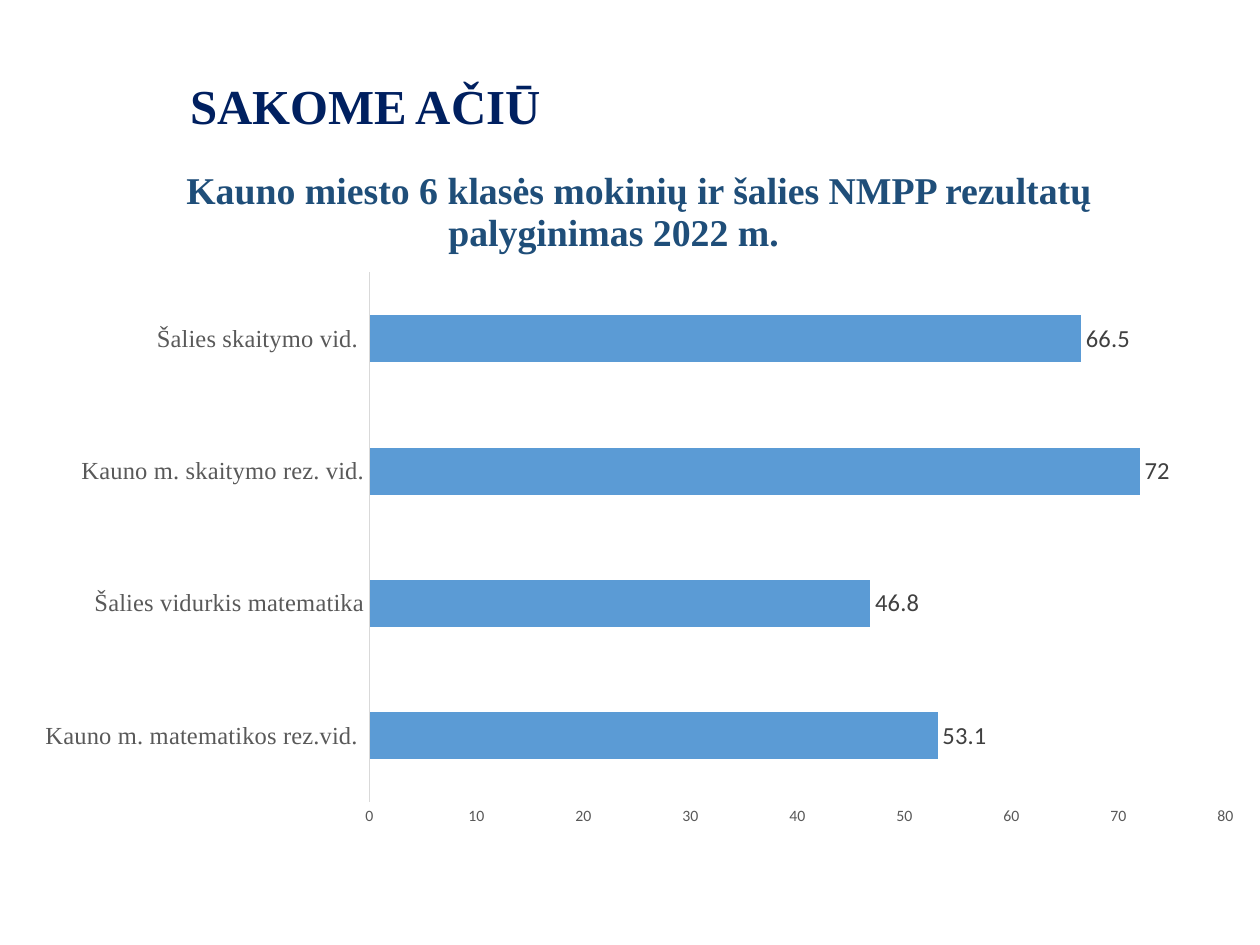
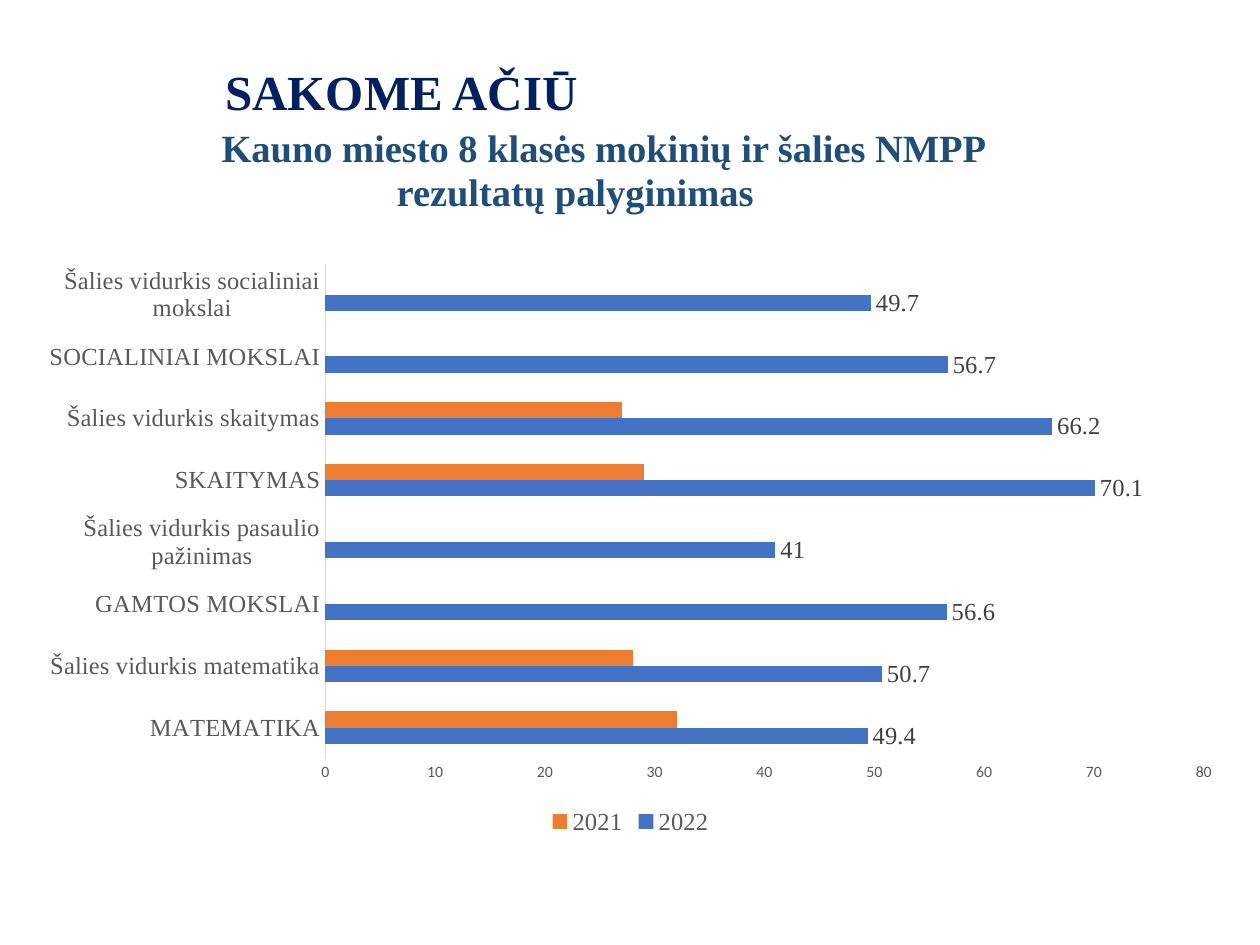
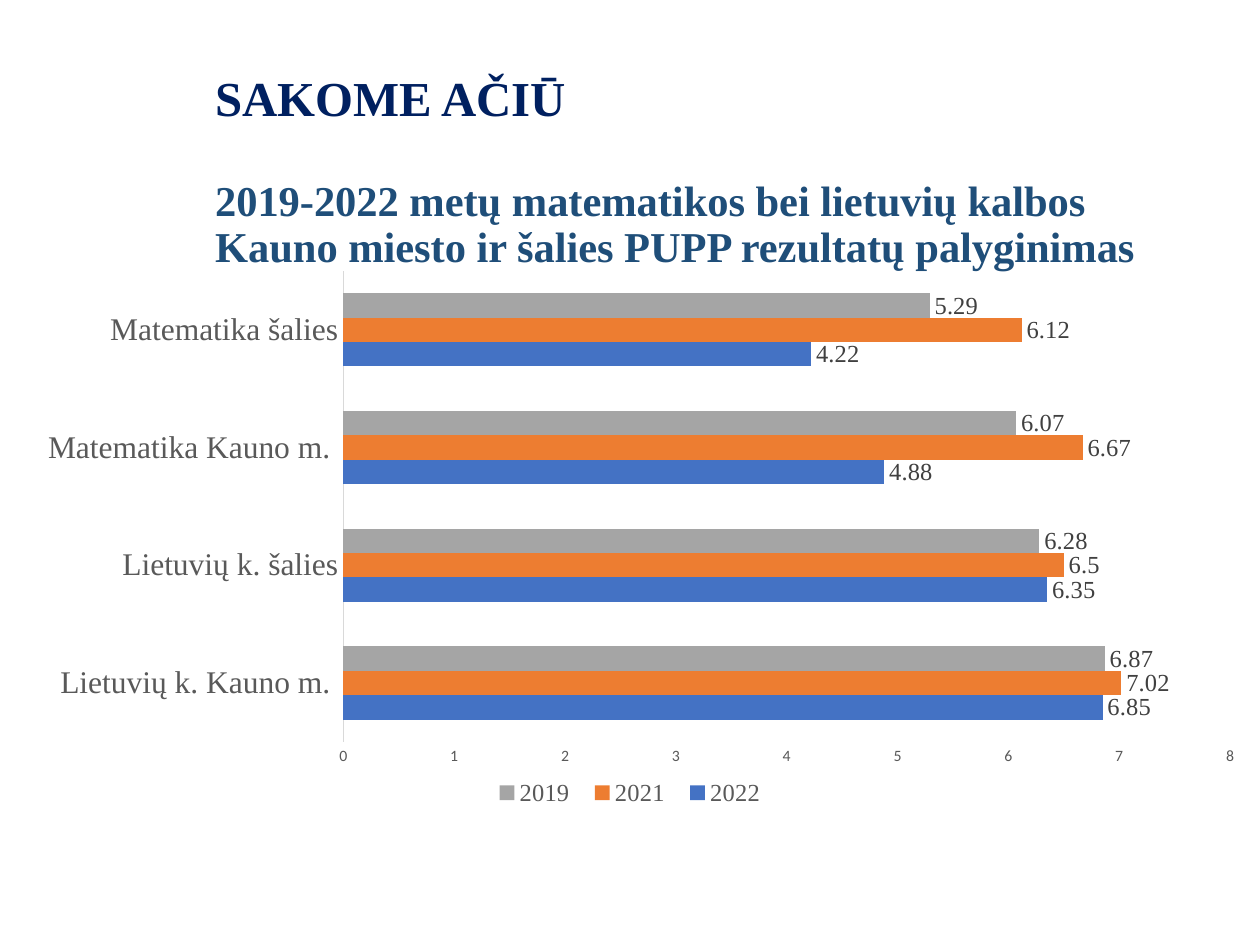
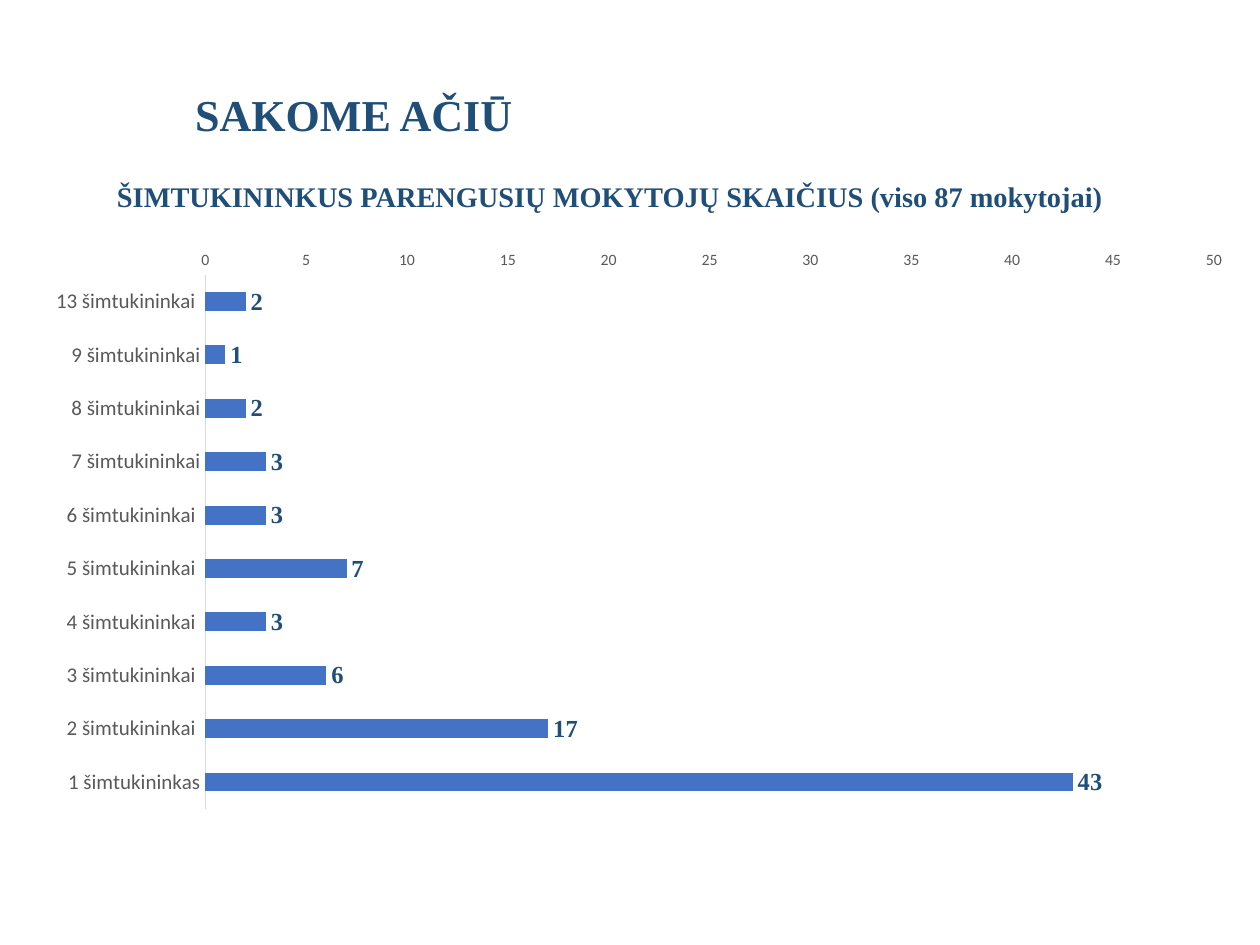
from lxml import etree
from pptx import Presentation
from pptx.chart.data import CategoryChartData
from pptx.dml.color import RGBColor
from pptx.enum.chart import XL_CHART_TYPE, XL_LABEL_POSITION, XL_LEGEND_POSITION, XL_TICK_MARK
from pptx.enum.text import MSO_ANCHOR
from pptx.oxml.ns import qn
from pptx.util import Inches, Pt

COLORS = {
    "navy": "002060", "heading": "1F4E79", "axis": "595959", "label": "404040",
    "line": "D9D9D9", "black": "000000", "sky": "5B9BD5", "blue": "4472C4",
    "orange": "ED7D31", "gray": "A5A5A5",
}
SERIF, SANS = "Times New Roman", "Calibri"
THANKS = "SAKOME AČIŪ"

# Title lines: text, size, colour, indent (in), space before (pt)
# Series: name, colour, values, label style (font, colour, bold) or None
SANS_LABEL = (SANS, "label", False)
SERIF_LABEL = (SERIF, "label", False)
BOLD_LABEL = (SERIF, "heading", True)
SLIDES = [
    {
        "title_box": (1.06, 0.36, 8.62, 1.63), "title_inset": 0.29,
        "title": [
            (THANKS, 27.9, "navy", 0.35, 0),
            ("Kauno miesto 6 klasės mokinių ir šalies NMPP rezultatų", 21.6, "heading", 0.32, 21.5),
            ("palyginimas 2022 m.", 21.6, "heading", 2.4, 0.5),
        ],
        "chart_box": (0.2, 2, 9.69, 4.67), "plot": (0.282, 0.035, 0.701, 0.9),
        "cat_font": (SERIF, 14), "axis_max": 80, "axis_step": 10,
        "cats": ["Kauno m. matematikos rez.vid. ", "Šalies vidurkis matematika",
                 "Kauno m. skaitymo rez. vid.", "Šalies skaitymo vid. "],
        "series": [("Series 1", "sky", [53.1, 46.8, 72, 66.5], SANS_LABEL)],
    },
    {
        "title_box": (0.69, 0.4, 8.62, 1.45), "title_inset": 0.14,
        "title": [
            (THANKS, 28, "navy", 1, 0),
            ("Kauno miesto 8 klasės mokinių ir šalies NMPP", 22, "heading", 0.97, 5),
            ("rezultatų palyginimas", 22, "heading", 2.36, 1.4),
        ],
        "chart_box": (0.2, 2, 9.61, 4.67),
        "cat_font": (SERIF, 14), "axis_max": 80, "axis_step": 10, "has_legend": True,
        "cats": ["MATEMATIKA", "Šalies vidurkis matematika", "GAMTOS MOKSLAI",
                 "Šalies vidurkis pasaulio pažinimas", "SKAITYMAS",
                 "Šalies vidurkis skaitymas", "SOCIALINIAI MOKSLAI",
                 "Šalies vidurkis socialiniai mokslai"],
        "series": [
            ("2022", "blue", [49.4, 50.7, 56.6, 41, 70.1, 66.2, 56.7, 49.7], SERIF_LABEL),
            ("2021", "orange", [32, 28, None, None, 29, 27, None, None], None),
        ],
    },
    {
        "title_box": (1.61, 0.52, 7.7, 1.7), "title_inset": 0.07,
        "title": [
            (THANKS, 27.9, "navy", 0, 0),
            ("2019-2022 metų matematikos bei lietuvių kalbos", 24.3, "heading", 0, 30.3),
            ("Kauno miesto ir šalies PUPP rezultatų palyginimas", 24.3, "heading", 0, 0),
        ],
        "chart_box": (0.12, 2, 9.76, 4.59), "plot": (0.267, 0.033, 0.721, 0.814),
        "cat_font": (SERIF, 18), "axis_max": 8, "axis_step": 1, "has_legend": True,
        "legend": (0.38, 0.9, 0.24, 0.07),
        "cats": ["Lietuvių k. Kauno m. ", "Lietuvių k. šalies",
                 "Matematika Kauno m. ", "Matematika šalies"],
        "series": [
            ("2022", "blue", [6.85, 6.35, 4.88, 4.22], SERIF_LABEL),
            ("2021", "orange", [7.02, 6.5, 6.67, 6.12], SERIF_LABEL),
            ("2019", "gray", [6.87, 6.28, 6.07, 5.29], SERIF_LABEL),
        ],
    },
    {
        "title_box": (0.83, 0.4, 8.62, 1.45), "title_inset": 0.34,
        "title": [
            (THANKS, 25.2, "heading", 0.62, 0),
            ("ŠIMTUKININKUS PARENGUSIŲ MOKYTOJŲ SKAIČIUS (viso 87 mokytojai)",
             16.2, "heading", 0, 24),
        ],
        "chart_box": (0.2, 1.85, 9.53, 4.74), "plot": (0.15, 0.07, 0.84, 0.894),
        "cat_font": (SANS, 12), "axis_max": 50, "axis_step": 5, "reverse": True,
        "cats": ["13 šimtukininkai ", "9 šimtukininkai", "8 šimtukininkai",
                 "7 šimtukininkai", "6 šimtukininkai ", "5 šimtukininkai ",
                 "4 šimtukininkai ", "3 šimtukininkai ", "2 šimtukininkai ",
                 "1 šimtukininkas"],
        "series": [("Series 1", "blue", [2, 1, 2, 3, 3, 7, 3, 6, 17, 43], BOLD_LABEL)],
    },
]


def rgb(name):
    return RGBColor.from_string(COLORS[name])


def set_font(font, face, size, color, bold=False):
    font.name, font.size, font.bold = face, Pt(size), bold
    font.color.rgb = rgb(color)


def add_title(slide, data):
    tf = slide.shapes.add_textbox(*map(Inches, data["title_box"])).text_frame
    tf.word_wrap = True
    tf.vertical_anchor = MSO_ANCHOR.TOP
    tf.margin_top = Inches(data["title_inset"])
    for i, (text, size, color, indent, before) in enumerate(data["title"]):
        p = tf.paragraphs[0] if i == 0 else tf.add_paragraph()
        p.text = text
        p.line_spacing = 0.9
        p.space_before = Pt(before)
        p._p.get_or_add_pPr().set("marL", str(Inches(indent)))
        set_font(p.font, SERIF, size, color, True)


def set_layout(element, position, fractions, inner=False):
    """Pin a chart part to fractions of the chart."""
    for old in element.findall(qn("c:layout")):
        element.remove(old)
    layout = etree.Element(qn("c:layout"))
    element.insert(position, layout)
    manual = etree.SubElement(layout, qn("c:manualLayout"))
    settings = [("layoutTarget", "inner")] if inner else []
    settings += [("xMode", "edge"), ("yMode", "edge"), *zip("xywh", fractions)]
    for tag, value in settings:
        etree.SubElement(manual, qn(f"c:{tag}")).set("val", str(value))


def style_axes(chart, data):
    cat, val = chart.category_axis, chart.value_axis
    for axis in (cat, val):
        axis.has_major_gridlines = False
        axis.major_tick_mark = axis.minor_tick_mark = XL_TICK_MARK.NONE
    set_font(cat.tick_labels.font, *data["cat_font"], "axis")
    cat.format.line.color.rgb = rgb("line")
    cat.format.line.width = Pt(0.75)
    cat.reverse_order = data.get("reverse", False)
    set_font(val.tick_labels.font, SANS, 9, "axis")
    val.format.line.fill.background()
    val.minimum_scale, val.maximum_scale = 0, data["axis_max"]
    val.major_unit = data["axis_step"]


def add_bar_chart(slide, data):
    chart_data = CategoryChartData()
    chart_data.categories = data["cats"]
    for name, _, values, _ in data["series"]:
        chart_data.add_series(name, values)
    chart = slide.shapes.add_chart(
        XL_CHART_TYPE.BAR_CLUSTERED, *map(Inches, data["chart_box"]), chart_data).chart
    set_font(chart.font, SANS, 10, "black")
    chart.has_title = False
    style_axes(chart, data)
    if "plot" in data:
        set_layout(chart._chartSpace.chart.plotArea, 0, data["plot"], inner=True)

    # Bars and value labels
    plot = chart.plots[0]
    plot.gap_width = 182
    plot.vary_by_categories = False
    for series, (_, color, _, label) in zip(plot.series, data["series"]):
        series.format.fill.solid()
        series.format.fill.fore_color.rgb = rgb(color)
        if label:
            face, label_color, bold = label
            labels = series.data_labels
            labels.show_value = True
            labels.position = XL_LABEL_POSITION.OUTSIDE_END
            set_font(labels.font, face, 14, label_color, bold)

    # Legend
    chart.has_legend = data.get("has_legend", False)
    if chart.has_legend:
        chart.legend.position = XL_LEGEND_POSITION.BOTTOM
        chart.legend.include_in_layout = False
        set_font(chart.legend.font, SERIF, 14, "axis")
        if "legend" in data:
            set_layout(chart.legend._element, 1, data["legend"])


def main():
    prs = Presentation()
    prs.slide_width, prs.slide_height = Inches(10), Inches(7.5)
    for data in SLIDES:
        slide = prs.slides.add_slide(prs.slide_layouts[6])
        add_title(slide, data)
        add_bar_chart(slide, data)
    prs.save("out.pptx")


if __name__ == "__main__":
    main()
